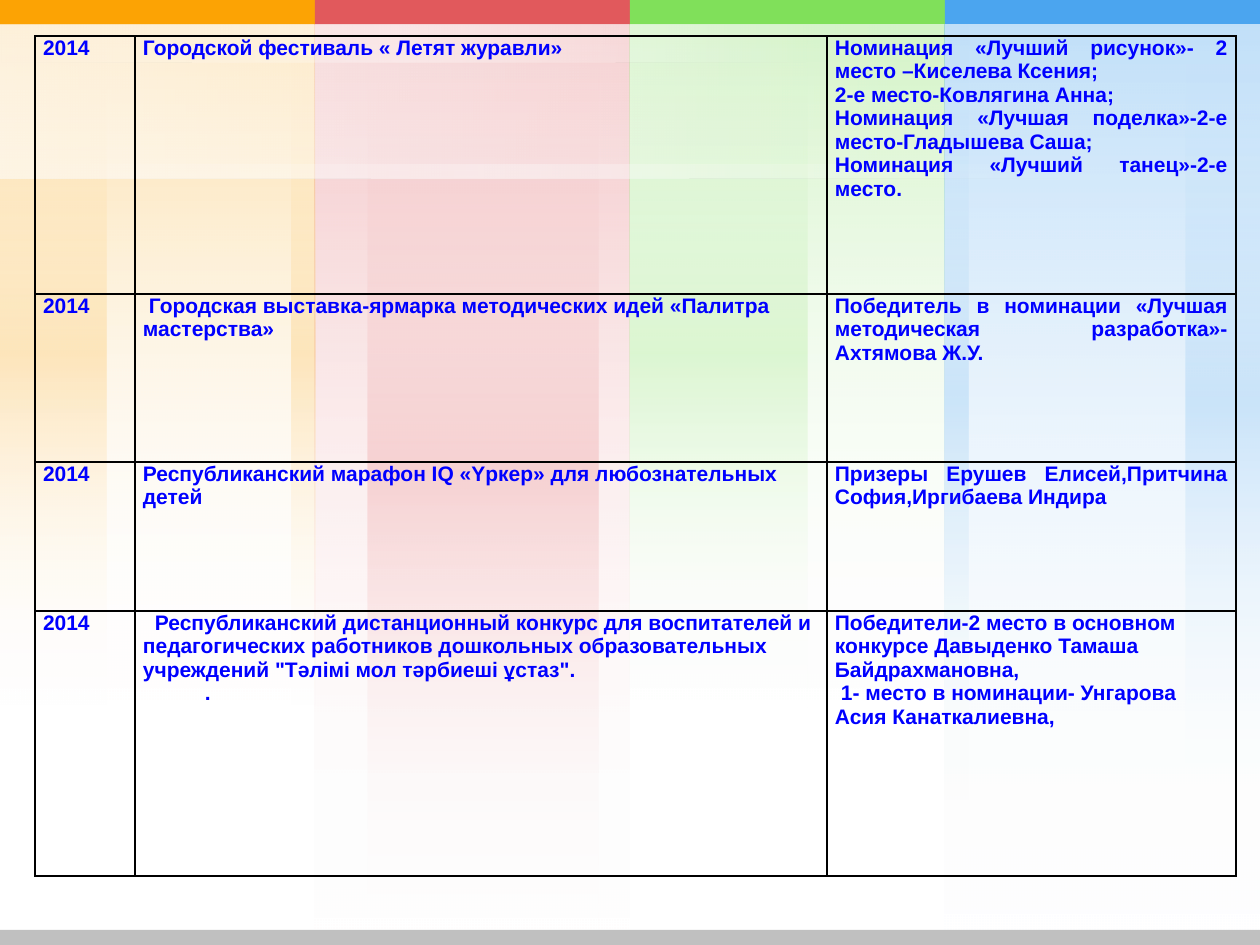
from lxml import etree
from pptx import Presentation
from pptx import util as u
from pptx.dml.color import RGBColor
from pptx.enum import shapes, text
from pptx.oxml import ns

PX = 914400 / 126
ORANGE = RGBColor(0xFC, 0xA3, 0x04)
RED = RGBColor(0xE1, 0x59, 0x5C)
GREEN = RGBColor(0x80, 0xE0, 0x5A)
BLUE = RGBColor(0x4B, 0xA5, 0xEF)
WHITE = RGBColor(0xFF, 0xFF, 0xFF)
GREY = RGBColor(0xC0, 0xC0, 0xC0)
BLACK = RGBColor(0, 0, 0)
INK = RGBColor(0, 0, 0xFF)

PAGE_BOX = (0, 0, 1260, 945)
COLUMN = 315
STRIPE = 24
JUSTIFY = text.PP_ALIGN.JUSTIFY
LEFT = text.PP_ALIGN.LEFT

AWARDS = [
    [
        [(JUSTIFY, 0, "2014")],
        [(LEFT, 0, "Городской фестиваль « Летят журавли»")],
        [
            (JUSTIFY, 0, "Номинация «Лучший рисунок»- 2 место –Киселева Ксения;"),
            (JUSTIFY, 0, "2-е место-Ковлягина Анна;"),
            (JUSTIFY, 0, "Номинация «Лучшая поделка»-2-е место-Гладышева Саша;"),
            (JUSTIFY, 0, "Номинация «Лучший танец»-2-е место."),
        ],
    ],
    [
        [(JUSTIFY, 0, "2014")],
        [(LEFT, 6, "Городская выставка-ярмарка методических идей «Палитра мастерства»")],
        [(JUSTIFY, 0, "Победитель в номинации «Лучшая методическая разработка»- Ахтямова Ж.У.")],
    ],
    [
        [(JUSTIFY, 0, "2014")],
        [(LEFT, 0, "Республиканский марафон IQ «Yркер» для любознательных детей")],
        [(JUSTIFY, 0, "Призеры Ерушев Елисей,Притчина София,Иргибаева Индира")],
    ],
    [
        [(JUSTIFY, 0, "2014")],
        [
            (LEFT, 12, "Республиканский дистанционный конкурс для воспитателей и "
                       "педагогических работников дошкольных образовательных "
                       "учреждений \"Тәлімі мол тәрбиеші ұстаз\"."),
            (LEFT, 62, "."),
        ],
        [
            (LEFT, 0, "Победители-2 место в основном конкурсе Давыденко Тамаша Байдрахмановна,"),
            (LEFT, 6, "1- место в номинации- Унгарова Асия Канаткалиевна,"),
        ],
    ],
]


def emu(px):
    return u.Emu(round(px * PX))


def add_node(parent, tag, **attributes):
    return etree.SubElement(parent, ns.qn(tag), {k: str(v) for k, v in attributes.items()})


def add_bar(page, box, color=None):
    bar = page.shapes.add_shape(shapes.MSO_SHAPE.RECTANGLE, *map(emu, box))
    bar.shadow.inherit = False
    bar.line.fill.background()
    if color is not None:
        bar.fill.solid()
        bar.fill.fore_color.rgb = color
    return bar


def fade_stops(color, opacity):
    return [(0, color, opacity), (100, WHITE, 0)]


def glow_stops(color, opacity):
    return [(0, WHITE, 0), (50, color, opacity), (100, WHITE, 0)]


def add_gradient_bar(page, box, stops):
    bar = add_bar(page, box)
    gradient = etree.Element(ns.qn("a:gradFill"), rotWithShape="1")
    stop_list = add_node(gradient, "a:gsLst")
    for position, color, opacity in stops:
        stop = add_node(stop_list, "a:gs", pos=position * 1000)
        shade = add_node(stop, "a:srgbClr", val=color)
        add_node(shade, "a:alpha", val=opacity * 1000)
    add_node(gradient, "a:lin", ang=90 * 60000, scaled=0)
    bar.element.spPr.find(ns.qn("a:prstGeom")).addnext(gradient)
    return bar


def add_curtain(page, box, color, parts):
    left, top, width, height = box
    for make_stops, offset, part_width, part_height in parts:
        part_box = (left + offset, top, part_width or width, part_height or height)
        add_gradient_bar(page, part_box, make_stops(color, 20))


def add_sheen(page, box):
    left, top, width, height = box
    parts = [
        (glow_stops, 140, 1061, 13),
        (fade_stops, 0, 946, 154),
        (glow_stops, 0, 808, 37),
        (fade_stops, 0, 946, 154),
    ]
    for make_stops, drop, length, depth in parts:
        middle_x, middle_y = left + length / 2, top + drop + depth / 2
        upright = (middle_x - depth / 2, middle_y - length / 2, depth, length)
        add_gradient_bar(page, upright, make_stops(WHITE, 35)).rotation = 270


def add_backdrop(page, box):
    left, top, width, height = box
    fade = (fade_stops, 0, None, None)
    curtains = [
        (1, RED, 945, [fade, (glow_stops, 53, 231, None), fade]),
        (2, GREEN, 708, [fade, (glow_stops, 0, 178, None), fade]),
        (3, BLUE, 941, [(glow_stops, 0, 24, 803), fade, (glow_stops, 241, 74, 803), fade]),
        (0, ORANGE, 708, [fade, (glow_stops, 292, 23, None), (glow_stops, 0, 106, None), fade]),
    ]
    for index, color, drop, parts in curtains:
        add_curtain(page, (left + index * COLUMN, top, COLUMN, drop), color, parts)
    for index, color in enumerate((ORANGE, RED, GREEN, BLUE)):
        add_bar(page, (left + index * COLUMN, top, COLUMN, STRIPE), color)
    add_sheen(page, (left, top + 25, width, 154))
    add_bar(page, (left, top + height - 15, width, 15), GREY)


def outline_cell(cell):
    properties = cell._tc.get_or_add_tcPr()
    for index, side in enumerate(("a:lnL", "a:lnR", "a:lnT", "a:lnB")):
        border = etree.Element(ns.qn(side), w=str(u.Pt(1)))
        add_node(add_node(border, "a:solidFill"), "a:srgbClr", val=BLACK)
        properties.insert(index, border)


def fill_cell(cell, paragraphs):
    cell.fill.background()
    cell.margin_left = cell.margin_right = emu(8)
    cell.margin_top = cell.margin_bottom = 0
    outline_cell(cell)
    for index, (alignment, indent, words) in enumerate(paragraphs):
        frame = cell.text_frame
        para = frame.add_paragraph() if index else frame.paragraphs[0]
        para.alignment = alignment
        if indent:
            para._p.get_or_add_pPr().set("indent", str(emu(indent)))
        span = para.add_run()
        span.text = words
        span.font.name = "Arial"
        span.font.size = u.Pt(12)
        span.font.bold = True
        span.font.color.rgb = INK


def add_awards(page, box):
    widths, heights = (100, 692, 409), (258, 168, 149, 265)
    grid = page.shapes.add_table(len(heights), len(widths), *map(emu, box)).table
    grid.first_row = grid.horz_banding = False
    for column, width in zip(grid.columns, widths):
        column.width = emu(width)
    for row, height, entries in zip(grid.rows, heights, AWARDS):
        row.height = emu(height)
        for cell, paragraphs in zip(row.cells, entries):
            fill_cell(cell, paragraphs)


def main():
    deck = Presentation()
    deck.slide_width, deck.slide_height = emu(PAGE_BOX[2]), emu(PAGE_BOX[3])
    page = deck.slides.add_slide(deck.slide_layouts[6])
    add_backdrop(page, PAGE_BOX)
    add_awards(page, (35, 36, 1201, 840))
    deck.save("out.pptx")


if __name__ == "__main__":
    main()
